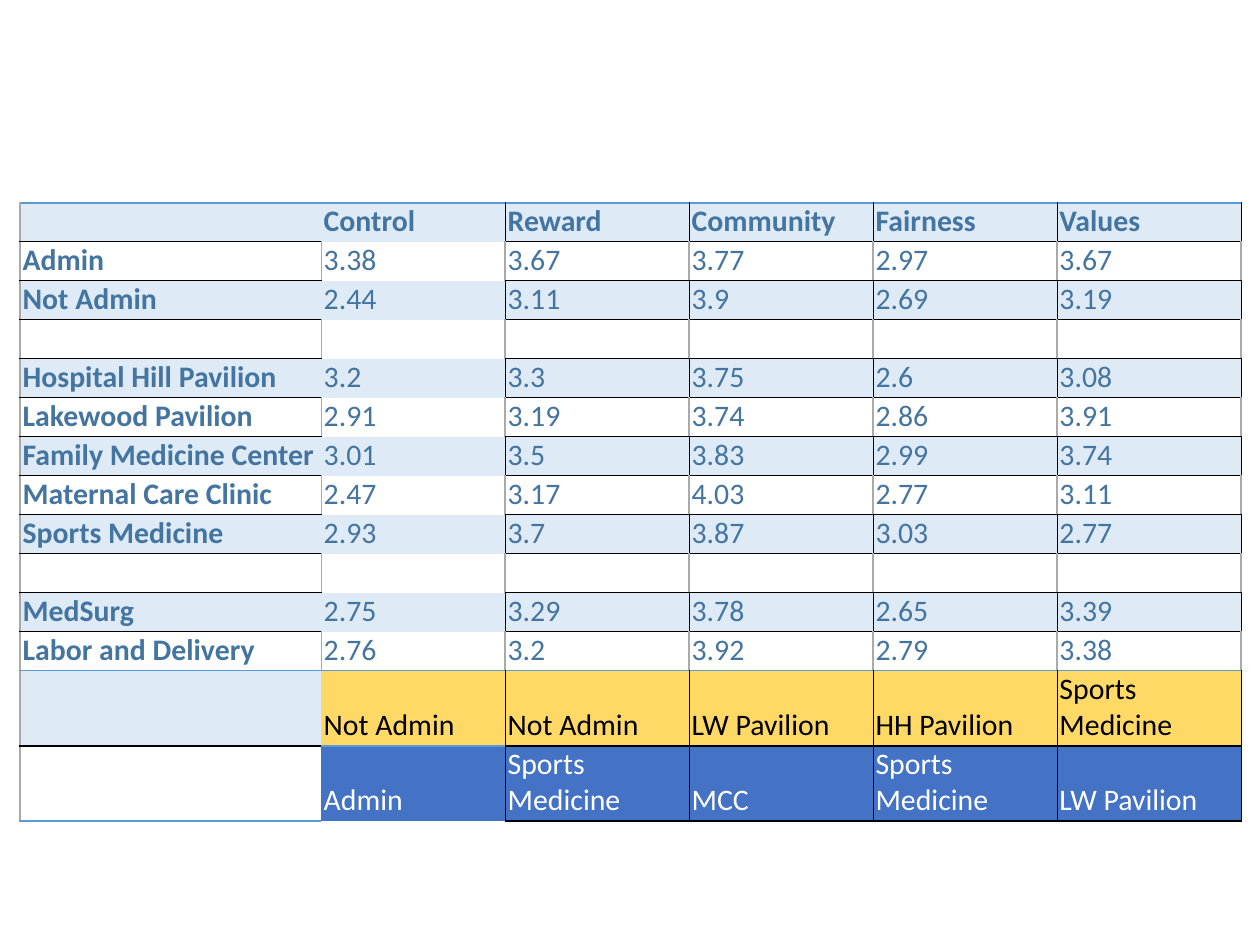
from lxml.etree import SubElement
from pptx import Presentation
from pptx.dml.color import RGBColor
from pptx.enum.text import MSO_ANCHOR
from pptx.oxml.ns import qn
from pptx.util import Pt

STEEL = RGBColor(0x44, 0x74, 0xA0)
PALE_BLUE = RGBColor(0xDE, 0xEB, 0xF7)
YELLOW = RGBColor(0xFF, 0xD9, 0x66)
BLUE = RGBColor(0x44, 0x72, 0xC4)
SKY = RGBColor(0x5B, 0x9B, 0xD5)
GRAY = RGBColor(0xAA, 0xAA, 0xAA)
BLACK = RGBColor(0, 0, 0)
WHITE = RGBColor(0xFF, 0xFF, 0xFF)

NO_STYLE = "{2D5ABB26-0587-4C30-8999-92F81FD0307C}"
FONT_SIZE = 17
LABEL_WIDTH, SCORE_WIDTH = 172.08, 105.12
ROW_HEIGHT, SUMMARY_HEIGHT = 22.3, 43

SCORES = [
    ("", "Control", "Reward", "Community", "Fairness", "Values"),
    ("Admin", "3.38", "3.67", "3.77", "2.97", "3.67"),
    ("Not Admin", "2.44", "3.11", "3.9", "2.69", "3.19"),
    ("",) * 6,
    ("Hospital Hill Pavilion", "3.2", "3.3", "3.75", "2.6", "3.08"),
    ("Lakewood Pavilion", "2.91", "3.19", "3.74", "2.86", "3.91"),
    ("Family Medicine Center", "3.01", "3.5", "3.83", "2.99", "3.74"),
    ("Maternal Care Clinic", "2.47", "3.17", "4.03", "2.77", "3.11"),
    ("Sports Medicine", "2.93", "3.7", "3.87", "3.03", "2.77"),
    ("",) * 6,
    ("MedSurg", "2.75", "3.29", "3.78", "2.65", "3.39"),
    ("Labor and Delivery", "2.76", "3.2", "3.92", "2.79", "3.38"),
]
SUMMARY = [
    ("", "Not Admin", "Not Admin", "LW Pavilion", "HH Pavilion", "Sports Medicine"),
    ("", "Admin", "Sports Medicine", "MCC", "Sports Medicine", "LW Pavilion"),
]
ROWS = SCORES + SUMMARY
LOWEST, HIGHEST = len(SCORES), len(SCORES) + 1
COLUMN_COUNT = len(ROWS[0])


def horizontal_rule(line, col):
    """Colour and width of the rule above row number `line`, or None."""
    if line in (0, LOWEST) or (line == len(ROWS) and col == 0):
        return SKY, 1
    if col == 1:
        return None
    return BLACK, 1 if line > LOWEST else 0.5


def vertical_rule(row, line):
    """Colour and width of the rule left of column number `line`, or None."""
    if line == 0 or (row % 2 and row < LOWEST):
        return GRAY, 1
    return None if line == 1 else (BLACK, 0.5)


def draw_borders(cell, row, col):
    rules = {
        "a:lnL": vertical_rule(row, col),
        "a:lnR": vertical_rule(row, col + 1),
        "a:lnT": horizontal_rule(row, col),
        "a:lnB": horizontal_rule(row + 1, col),
    }
    properties = cell._tc.get_or_add_tcPr()
    for side, rule in rules.items():
        if rule:
            color, width = rule
            border = SubElement(properties, qn(side), w=str(Pt(width)))
            paint = SubElement(border, qn("a:solidFill"))
            SubElement(paint, qn("a:srgbClr"), val=str(color))


def cell_colors(row, col):
    """Fill (None for clear) and text colour of a cell."""
    if col and row == LOWEST:
        return YELLOW, BLACK
    if col and row == HIGHEST:
        return BLUE, WHITE
    return (None if row % 2 else PALE_BLUE), STEEL


def write_text(cell, text, *, color, bold=False, size=FONT_SIZE, font="Calibri"):
    cell.margin_left = cell.margin_right = cell.margin_bottom = Pt(1.44)
    cell.margin_top = 0
    cell.vertical_anchor = MSO_ANCHOR.BOTTOM
    paragraph = cell.text_frame.paragraphs[0]
    if not text:
        SubElement(paragraph._p, qn("a:endParaRPr"), sz=str(size * 100))
        return
    run = paragraph.add_run()
    run.text = text
    run.font.name = font
    run.font.size = Pt(size)
    run.font.bold = bold
    run.font.color.rgb = color


def fill_cell(cell, color):
    if color is None:
        cell.fill.background()
    else:
        cell.fill.solid()
        cell.fill.fore_color.rgb = color


def add_score_table(slide):
    widths = [LABEL_WIDTH] + [SCORE_WIDTH] * (COLUMN_COUNT - 1)
    heights = [ROW_HEIGHT] * len(SCORES) + [SUMMARY_HEIGHT] * len(SUMMARY)
    table = slide.shapes.add_table(
        len(ROWS), COLUMN_COUNT, Pt(11.5), Pt(115.9), Pt(sum(widths)), Pt(sum(heights))
    ).table
    table.first_row = table.horz_banding = False
    table._tbl.tblPr.find(qn("a:tableStyleId")).text = NO_STYLE
    for column, width in zip(table.columns, widths):
        column.width = Pt(width)
    for table_row, height in zip(table.rows, heights):
        table_row.height = Pt(height)

    for row, texts in enumerate(ROWS):
        for col, text in enumerate(texts):
            cell = table.cell(row, col)
            fill, text_color = cell_colors(row, col)
            draw_borders(cell, row, col)
            fill_cell(cell, fill)
            write_text(cell, text, color=text_color, bold=row == 0 or col == 0)


def main():
    presentation = Presentation()
    presentation.slide_width, presentation.slide_height = Pt(720), Pt(540)
    slide = presentation.slides.add_slide(presentation.slide_layouts[6])
    add_score_table(slide)
    presentation.save("out.pptx")


if __name__ == "__main__":
    main()
